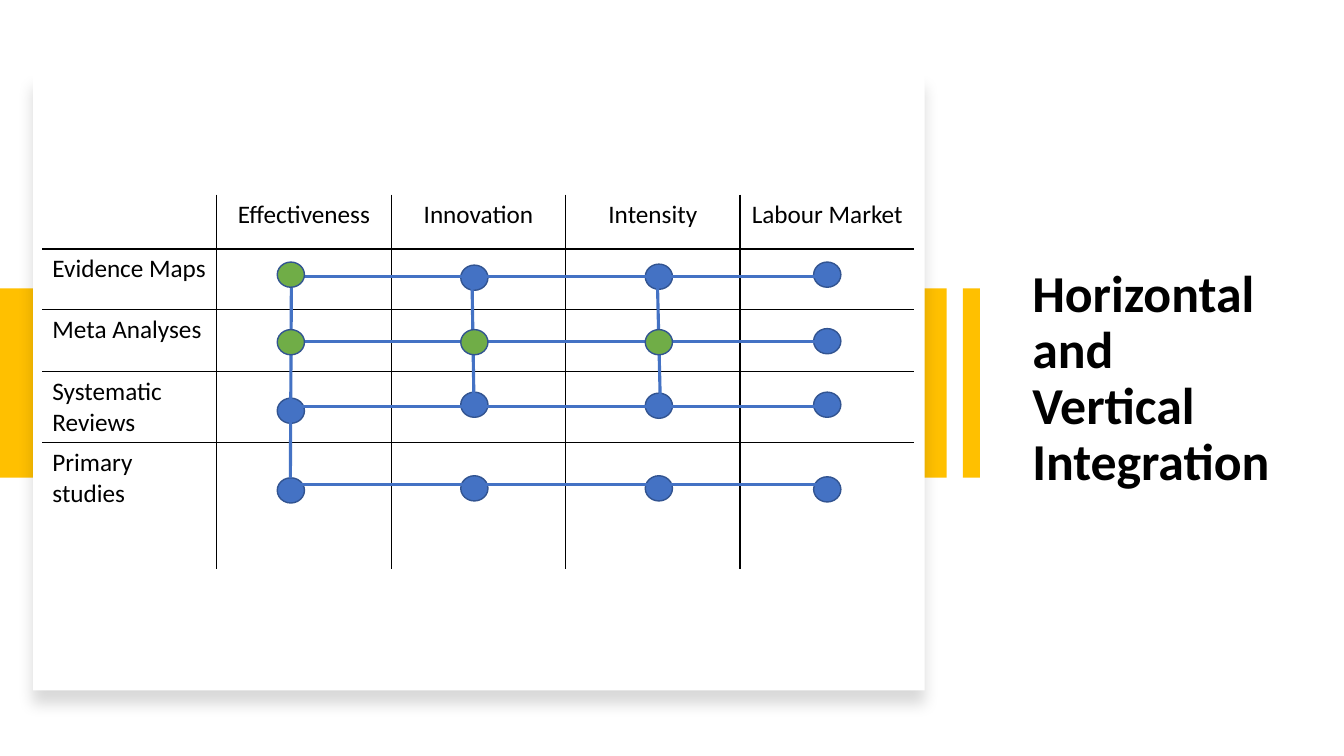
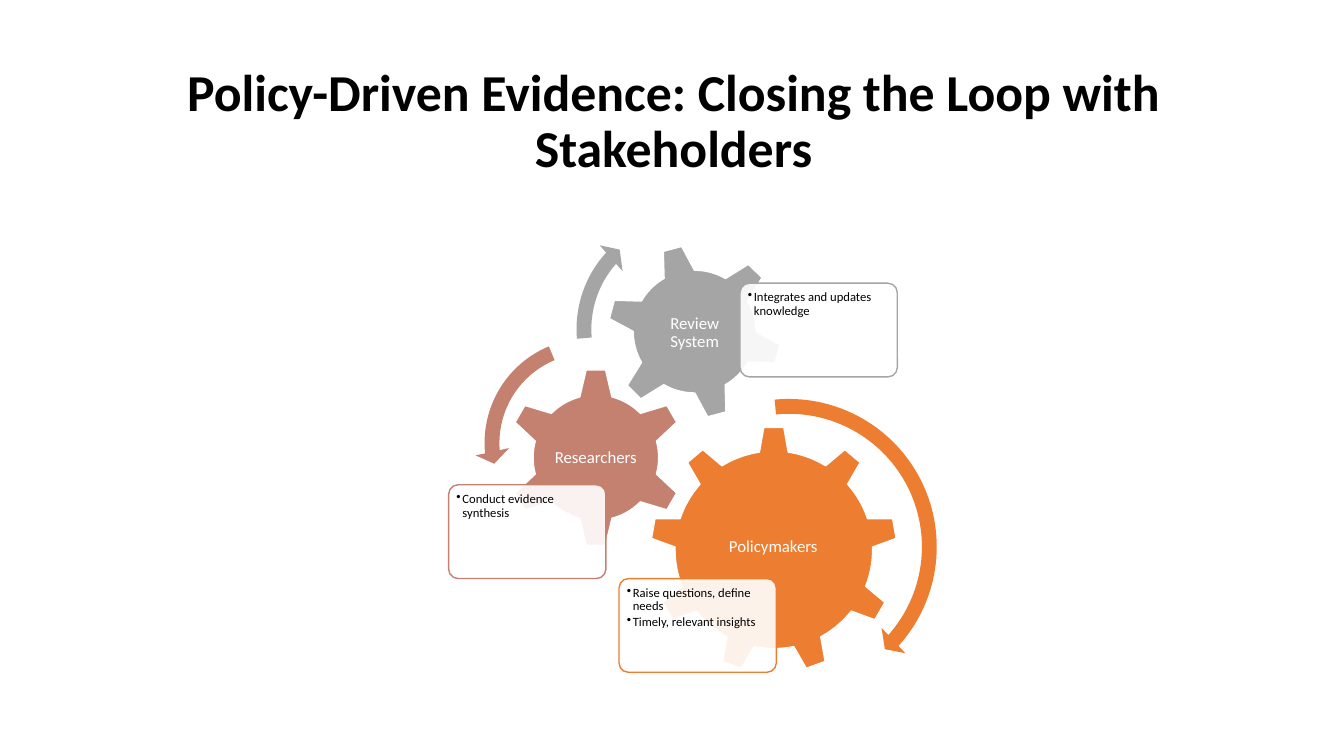
from dataclasses import dataclass
from itertools import product

from lxml.etree import SubElement
from pptx import Presentation
from pptx.dml.color import RGBColor
from pptx.enum.shapes import MSO_CONNECTOR, MSO_SHAPE
from pptx.enum.text import MSO_ANCHOR, PP_ALIGN
from pptx.oxml import parse_xml
from pptx.oxml.ns import nsdecls, qn
from pptx.util import Inches, Pt

FONT = "Calibri"
BLACK = RGBColor(0x00, 0x00, 0x00)
WHITE = RGBColor(0xFF, 0xFF, 0xFF)
GOLD = RGBColor(0xFF, 0xC0, 0x00)
BLUE = RGBColor(0x44, 0x72, 0xC4)
NAVY = RGBColor(0x32, 0x54, 0x91)
GREEN = RGBColor(0x70, 0xAD, 0x47)
ORANGE = RGBColor(0xED, 0x7D, 0x31)
ROSE = RGBColor(0xC4, 0x81, 0x70)
GRAY = RGBColor(0xA5, 0xA5, 0xA5)

Box = tuple[float, float, float, float]


@dataclass(frozen=True)
class Arrow:
    kind: MSO_SHAPE
    box: Box
    thickness: float
    angles: tuple[float, float, float]
    head: float


@dataclass(frozen=True)
class Gear:
    label: str
    label_box: Box
    kind: MSO_SHAPE
    box: Box
    rotation: float
    color: RGBColor
    note_at: tuple[float, float]
    notes: tuple[str, ...]
    arrow: Arrow


HEADERS = ("", "Effectiveness", "Innovation", "Intensity", "Labour Market")
STUDY_TYPES = ("Evidence Maps", "Meta Analyses", "Systematic Reviews", "Primary studies")
ROW_HEIGHTS = (0.54, 0.6, 0.62, 0.63, 1.26)
COL_WIDTH = 1.73

DOT_W, DOT_H = 0.27, 0.25
DOT_LEFTS = (2.75, 4.57, 6.4, 8.07)
DOT_TOPS = (
    (2.6, 2.63, 2.62, 2.6),
    (3.27, 3.27, 3.27, 3.26),
    (3.95, 3.89, 3.9, 3.89),
    (4.74, 4.72, 4.72, 4.73),
)
GREEN_DOTS = {(0, 0), (1, 0), (1, 1), (1, 2)}
LINK_LEFT, LINK_RIGHT = 2.89, 8.2
ROW_LINKS = (2.74, 3.39, 4.03, 4.81)
COLUMN_LINKS = (
    (2.89, 2.85, 2.88, 4.74),
    (4.68, 2.68, 4.7, 3.94),
    (6.52, 2.77, 6.55, 4.03),
)

NOTE_W, NOTE_H = 1.56, 0.93
GEARS = (
    Gear("Policymakers", (6.94, 4.8, 1.46, 1.26), MSO_SHAPE.GEAR_9,
         (6.45, 4.23, 2.45, 2.45), 0, ORANGE, (6.14, 5.74),
         ("Raise questions, define needs", "Timely, relevant insights"),
         Arrow(MSO_SHAPE.CIRCULAR_ARROW, (6.26, 3.86, 3.13, 3.13),
               4.7, (4.98, 41.89, 264.46), 5.5)),
    Gear("Researchers", (5.47, 4.1, 0.88, 0.88), MSO_SHAPE.GEAR_6,
         (5.02, 3.65, 1.78, 1.78), 0, ROSE, (4.45, 4.81),
         ("Conduct evidence synthesis",),
         Arrow(MSO_SHAPE.LEFT_CIRCULAR_ARROW, (4.71, 3.26, 2.27, 2.27),
               6.5, (7.17, 174.82, 247.3), 7.5)),
    Gear("Review System", (6.4, 2.81, 0.98, 0.98), MSO_SHAPE.GEAR_6,
         (6.02, 2.42, 1.74, 1.74), 345, GRAY, (7.34, 2.81),
         ("Integrates and updates knowledge",),
         Arrow(MSO_SHAPE.CIRCULAR_ARROW, (5.62, 2.04, 2.45, 2.45),
               6, (6.57, 221.9, 175.14), 7)),
)


def inches(box: Box) -> list[int]:
    return [Inches(v) for v in box]


def add_shape(slide, kind: MSO_SHAPE, box: Box, fill: RGBColor,
              line: RGBColor | None = None):
    sp = slide.shapes.add_shape(kind, *inches(box))
    sp.shadow.inherit = False
    sp.fill.solid()
    sp.fill.fore_color.rgb = fill
    if line is None:
        sp.line.fill.background()
    else:
        sp.line.color.rgb = line
        sp.line.width = Pt(1)
    return sp


def format_paragraph(p, size: float, color: RGBColor = BLACK, bold: bool = False,
                     align: PP_ALIGN = PP_ALIGN.LEFT, spacing: float = 0.9) -> None:
    p.alignment = align
    p.line_spacing = spacing
    for r in p.runs:
        r.font.name = FONT
        r.font.size = Pt(size)
        r.font.bold = bold
        r.font.color.rgb = color


def set_margins(tf, margin: float) -> None:
    tf.margin_left = tf.margin_right = Inches(margin)
    tf.margin_top = tf.margin_bottom = Inches(margin)


def add_text(slide, text: str, box: Box, size: float, color: RGBColor = BLACK,
             bold: bool = False, align: PP_ALIGN = PP_ALIGN.CENTER):
    tf = slide.shapes.add_textbox(*inches(box)).text_frame
    tf.word_wrap = True
    tf.vertical_anchor = MSO_ANCHOR.MIDDLE
    tf.text = text
    format_paragraph(tf.paragraphs[0], size, color, bold, align)
    return tf


def add_title(slide, text: str, box: Box, align: PP_ALIGN) -> None:
    add_text(slide, text, box, 37, bold=True, align=align)


def add_card(slide, box: Box) -> None:
    sp = add_shape(slide, MSO_SHAPE.RECTANGLE, box, WHITE)
    effects = sp._element.spPr.find(qn("a:effectLst"))
    shadow = SubElement(effects, qn("a:outerShdw"), blurRad=str(Pt(11)),
                        dist=str(Pt(10)), dir="5400000", algn="t", rotWithShape="0")
    color = SubElement(shadow, qn("a:srgbClr"), val=str(BLACK))
    SubElement(color, qn("a:alpha"), val="15000")


def set_borders(cell, visible: dict[str, bool]) -> None:
    tc_pr = cell._tc.get_or_add_tcPr()
    for i, (side, shown) in enumerate(visible.items()):
        paint = f'<a:solidFill><a:srgbClr val="{BLACK}"/></a:solidFill>' if shown else "<a:noFill/>"
        tc_pr.insert(i, parse_xml(
            f'<a:ln{side} {nsdecls("a")} w="{Pt(1)}">{paint}</a:ln{side}>'))


def add_matrix(slide) -> None:
    n_rows, n_cols = len(ROW_HEIGHTS), len(HEADERS)
    table = slide.shapes.add_table(
        n_rows, n_cols,
        *inches((0.42, 1.93, COL_WIDTH * n_cols, sum(ROW_HEIGHTS)))).table
    table.first_row = table.horz_banding = False
    for column in table.columns:
        column.width = Inches(COL_WIDTH)
    for row, height in zip(table.rows, ROW_HEIGHTS):
        row.height = Inches(height)
    for i, j in product(range(n_rows), range(n_cols)):
        cell = table.cell(i, j)
        cell.fill.background()
        if i == 0:
            cell.text_frame.text = HEADERS[j]
        elif j == 0:
            cell.text_frame.text = STUDY_TYPES[i - 1]
        p = cell.text_frame.paragraphs[0]
        format_paragraph(p, 18, spacing=1.0,
                         align=PP_ALIGN.LEFT if j == 0 else PP_ALIGN.CENTER)
        set_borders(cell, {"L": j > 0, "R": j < n_cols - 1,
                           "T": i > 0, "B": i < n_rows - 1})


def add_dots(slide, color: RGBColor, green: bool) -> None:
    for i, tops in enumerate(DOT_TOPS):
        for j, (left, top) in enumerate(zip(DOT_LEFTS, tops)):
            if ((i, j) in GREEN_DOTS) == green:
                add_shape(slide, MSO_SHAPE.OVAL, (left, top, DOT_W, DOT_H), color, NAVY)


def add_link(slide, ends: Box) -> None:
    cxn = slide.shapes.add_connector(MSO_CONNECTOR.STRAIGHT, *inches(ends))
    cxn.line.color.rgb = BLUE
    cxn.line.width = Pt(2.25)
    SubElement(cxn._element.spPr, qn("a:effectLst"))


def add_note(slide, gear: Gear) -> None:
    sp = add_shape(slide, MSO_SHAPE.ROUNDED_RECTANGLE,
                   (*gear.note_at, NOTE_W, NOTE_H), WHITE, gear.color)
    sp.adjustments[0] = 0.1
    white = sp._element.spPr.find(qn("a:solidFill")).find(qn("a:srgbClr"))
    SubElement(white, qn("a:alpha"), val="90000")
    tf = sp.text_frame
    tf.word_wrap = True
    tf.vertical_anchor = MSO_ANCHOR.TOP
    set_margins(tf, 0.05)
    tf.text = "\n".join(gear.notes)
    for p in tf.paragraphs:
        format_paragraph(p, 9)
        p.space_after = Pt(1.4)
        p_pr = p._p.get_or_add_pPr()
        p_pr.set("marL", str(Inches(0.06)))
        p_pr.set("indent", str(Inches(-0.06)))
        SubElement(p_pr, qn("a:buChar"), char="•")


def add_gear(slide, gear: Gear) -> None:
    sp = add_shape(slide, gear.kind, gear.box, gear.color, WHITE)
    sp.rotation = gear.rotation
    tf = add_text(slide, gear.label, gear.label_box, 12, WHITE)
    set_margins(tf, 0.02)
    add_note(slide, gear)


def add_arrow(slide, arrow: Arrow, color: RGBColor) -> None:
    sp = add_shape(slide, arrow.kind, arrow.box, color)
    values = (arrow.thickness / 100, *(a * 0.6 for a in arrow.angles), arrow.head / 100)
    for i, value in enumerate(values):
        sp.adjustments[i] = value


def build_integration(slide) -> None:
    add_title(slide, "Horizontal and Vertical Integration",
              (10.14, 2.21, 2.7, 3.11), PP_ALIGN.LEFT)
    add_shape(slide, MSO_SHAPE.RECTANGLE, (0, 2.86, 9.39, 1.88), GOLD)
    add_card(slide, (0.33, 0.73, 8.84, 6.12))
    add_shape(slide, MSO_SHAPE.RECTANGLE, (9.55, 2.86, 0.17, 1.88), GOLD)
    add_matrix(slide)
    add_dots(slide, BLUE, green=False)
    for y in ROW_LINKS:
        add_link(slide, (LINK_LEFT, y, LINK_RIGHT, y))
    for ends in COLUMN_LINKS:
        add_link(slide, ends)
    add_dots(slide, GREEN, green=True)


def build_stakeholders(slide) -> None:
    add_title(slide, "Policy-Driven Evidence: Closing the Loop with Stakeholders",
              (1.67, 0.6, 10.02, 1.24), PP_ALIGN.CENTER)
    for gear in GEARS:
        add_gear(slide, gear)
    for gear in GEARS:
        add_arrow(slide, gear.arrow, gear.color)


def main() -> None:
    prs = Presentation()
    prs.slide_width = Inches(13.33)
    prs.slide_height = Inches(7.5)
    for build in (build_integration, build_stakeholders):
        build(prs.slides.add_slide(prs.slide_layouts[6]))
    prs.save("out.pptx")


if __name__ == "__main__":
    main()
